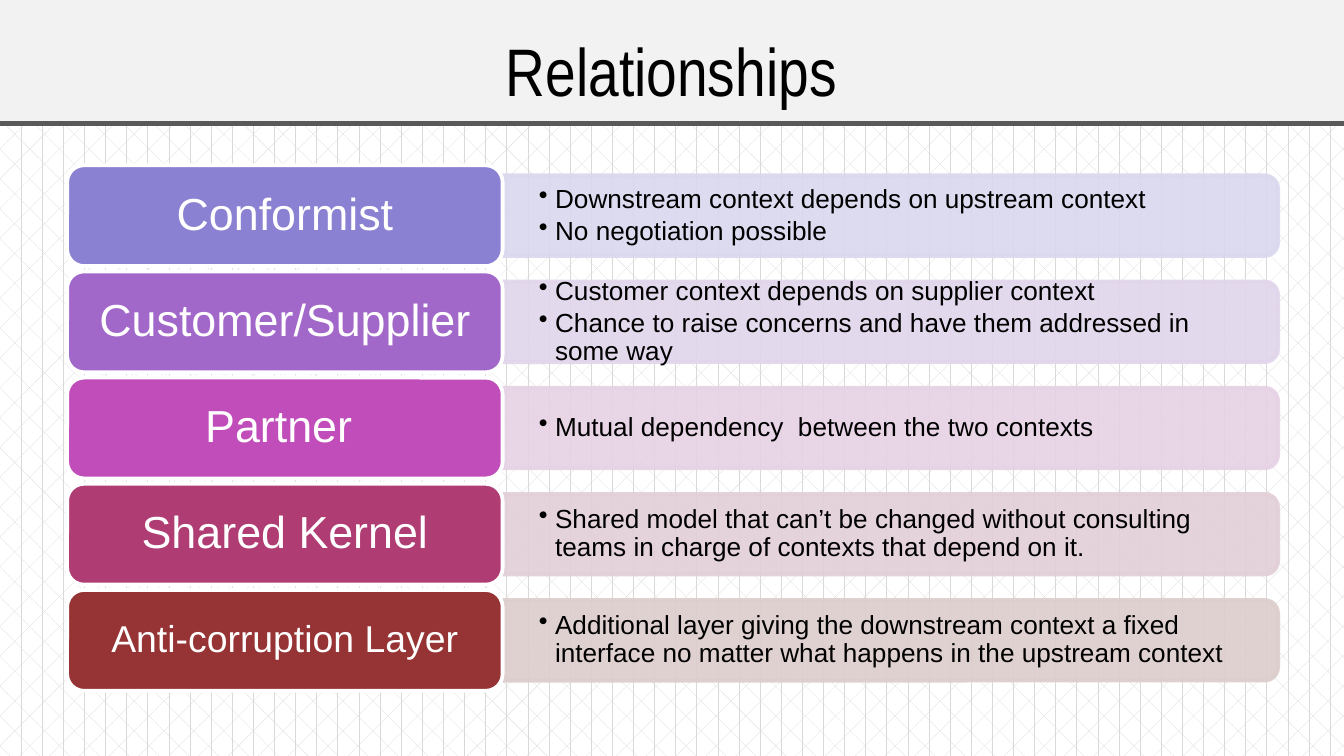
from lxml.etree import SubElement
from pptx import Presentation
from pptx.dml.color import RGBColor
from pptx.enum.dml import MSO_PATTERN
from pptx.enum.shapes import MSO_SHAPE as Shape
from pptx.enum.text import MSO_ANCHOR as Anchor, PP_ALIGN as Align
from pptx.oxml.ns import qn
from pptx.util import Inches, Pt

COLORS = {
    "black": "000000", "white": "FFFFFF", "pattern": "D9D9D9",
    "banner": "F2F2F2", "rule": "595959",
}
# name, name size, name colour, panel colour, points
RELATIONSHIPS = [
    ("Conformist", 24, "8B81D2", "DAD8EE",
     ["Downstream context depends on upstream context",
      "No negotiation possible"]),
    ("Customer/Supplier", 24, "A167C9", "E1D5EB",
     ["Customer context depends on supplier context",
      "Chance to raise concerns and have them addressed in some way"]),
    ("Partner ", 24, "C14DBA", "E6D2E5",
     ["Mutual dependency  between the two contexts"]),
    ("Shared Kernel", 24, "AF3C73", "E2CFD8",
     ["Shared model that can’t be changed without consulting "
      "teams in charge of contexts that depend on it."]),
    ("Anti-corruption Layer", 20, "963334", "DDCDCD",
     ["Additional layer giving the downstream context a fixed "
      "interface no matter what happens in the upstream context"]),
]

# Grid: a name column and a panel column, rows at an equal pitch
NAME_LEFT, NAME_WIDTH, NAME_HEIGHT = Inches(0.5), Inches(3.24), Inches(0.75)
PANEL_LEFT, PANEL_WIDTH, PANEL_HEIGHT = NAME_LEFT + NAME_WIDTH, Inches(5.77), Inches(0.6)
FIRST_CENTER, ROW_PITCH = Inches(1.23) + NAME_HEIGHT // 2, Inches(0.79)
POINTS_WIDTH, POINTS_HEIGHT = Inches(5.74), Inches(0.54)
HANG = Inches(0.12)
POINT_SIZE = 14


def paint(shape, fill, line, width):
    shape.shadow.inherit = False
    shape.fill.solid()
    shape.fill.fore_color.rgb = RGBColor.from_string(fill)
    shape.line.color.rgb = RGBColor.from_string(line)
    shape.line.width = Pt(width)


def style(paragraph, font, size, color):
    for run in paragraph.runs:
        run.font.name = font
        run.font.size = Pt(size)
        run.font.color.rgb = RGBColor.from_string(color)


prs = Presentation()
prs.slide_width = Inches(10)
prs.slide_height = prs.slide_width * 9 // 16
slide = prs.slides.add_slide(prs.slide_layouts[5])

backdrop = slide.background.fill
backdrop.patterned()
backdrop.pattern = MSO_PATTERN.DIVOT
backdrop.fore_color.rgb = RGBColor.from_string(COLORS["pattern"])
backdrop.back_color.rgb = RGBColor.from_string(COLORS["white"])

title = slide.shapes.title
title.left, title.top = Inches(-0.17), Inches(-0.1)
title.width, title.height = Inches(10.33), Inches(1.02)
paint(title, COLORS["banner"], COLORS["rule"], 3)
heading = title.text_frame
heading.text = "Relationships"
heading.vertical_anchor = Anchor.BOTTOM
heading.margin_left = heading.margin_right = Inches(0.1)
heading.margin_top = heading.margin_bottom = Inches(0.1)
heading.paragraphs[0].alignment = Align.CENTER
style(heading.paragraphs[0], "Arial Narrow", 36, COLORS["black"])

for row, (name, size, name_color, panel_color, points) in enumerate(RELATIONSHIPS):
    center = FIRST_CENTER + row * ROW_PITCH

    # Turned a quarter so that the rounded corners face right
    panel = slide.shapes.add_shape(
        Shape.ROUND_2_SAME_RECTANGLE,
        PANEL_LEFT + (PANEL_WIDTH - PANEL_HEIGHT) // 2, center - PANEL_WIDTH // 2,
        PANEL_HEIGHT, PANEL_WIDTH)
    panel.rotation = 90
    paint(panel, panel_color, panel_color, 2)
    for color in panel.element.spPr.iter(qn("a:srgbClr")):
        SubElement(color, qn("a:alpha"), val="90000")

    description = slide.shapes.add_textbox(
        PANEL_LEFT, center - POINTS_HEIGHT // 2, POINTS_WIDTH, POINTS_HEIGHT).text_frame
    description.word_wrap = True
    description.vertical_anchor = Anchor.MIDDLE
    description.margin_left = description.margin_right = Inches(0.27)
    description.margin_top = description.margin_bottom = Inches(0.14)
    description.text = "\n".join(points)
    for point in description.paragraphs:
        point.level = 1
        point.line_spacing = 0.9
        point.space_after = Pt(2)
        style(point, "Arial", POINT_SIZE, COLORS["black"])
        props = point._p.get_or_add_pPr()
        props.set("marL", str(HANG))
        props.set("indent", str(-HANG))
        SubElement(props, qn("a:buChar"), char="•")
        # The bullet takes its size from the end of the paragraph
        SubElement(point._p, qn("a:endParaRPr"), sz=str(POINT_SIZE * 100))

    label = slide.shapes.add_shape(
        Shape.ROUNDED_RECTANGLE, NAME_LEFT, center - NAME_HEIGHT // 2,
        NAME_WIDTH, NAME_HEIGHT)
    paint(label, name_color, COLORS["white"], 2)
    label.text_frame.text = name
    label.text_frame.word_wrap = True
    label.text_frame.vertical_anchor = Anchor.MIDDLE
    caption = label.text_frame.paragraphs[0]
    caption.alignment = Align.CENTER
    caption.line_spacing = 0.9
    style(caption, "Arial", size, COLORS["white"])

prs.save("out.pptx")
